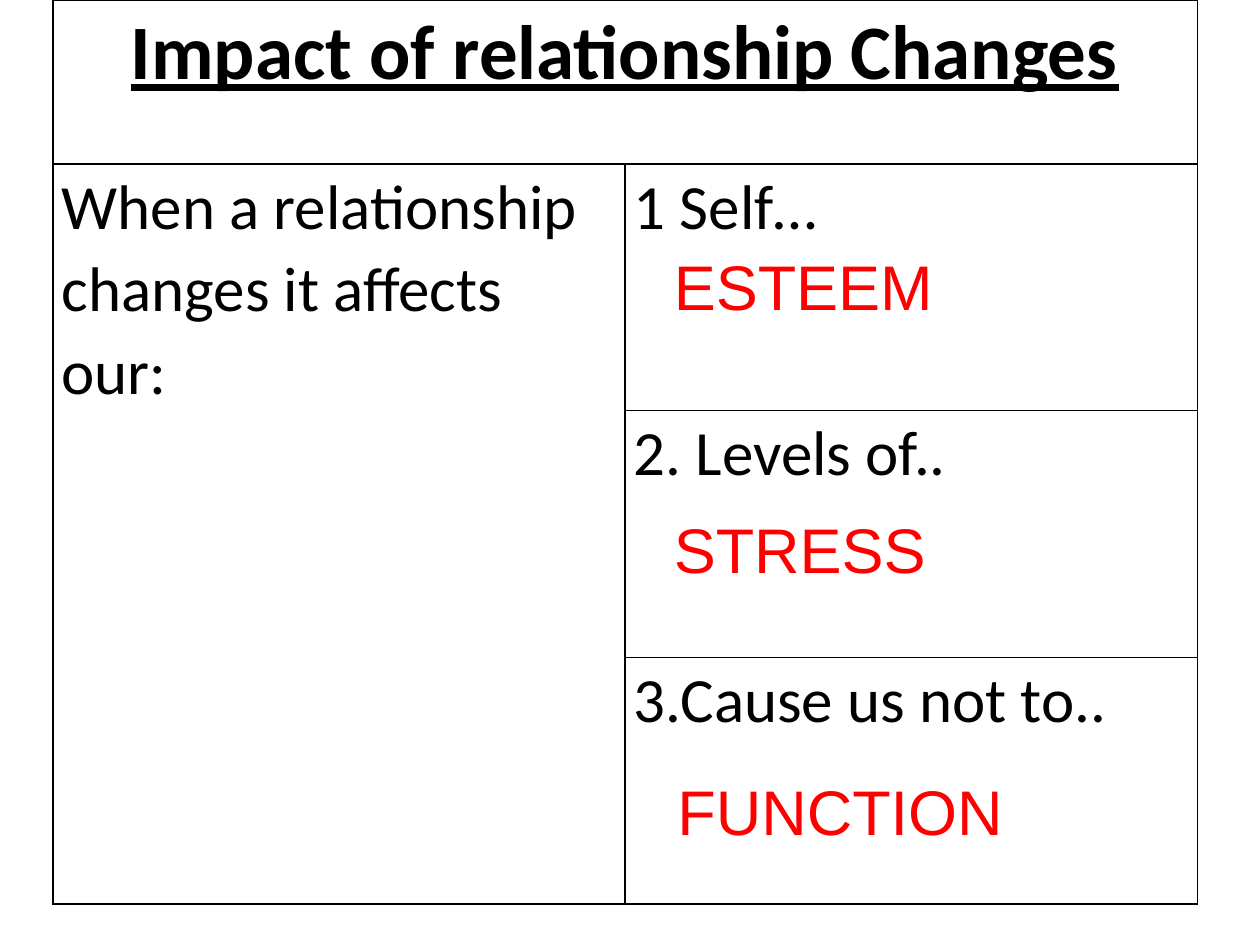
import pptx
import pptx.util
import pptx.dml.color
import pptx.enum.text
from lxml import etree

Pt = pptx.util.Pt
BLACK = pptx.dml.color.RGBColor(0, 0, 0)
RED = pptx.dml.color.RGBColor(255, 0, 0)
CENTER = pptx.enum.text.PP_ALIGN.CENTER
NS = "http://schemas.openxmlformats.org/drawingml/2006/main"


class Deck:
    """Holds the style and the current slide."""
    body, hand = "Calibri", "Arial"
    size, inset = 36, 5.04

    def __init__(self, wide, high):
        self.prs = pptx.Presentation()
        self.prs.slide_width, self.prs.slide_height = Pt(wide), Pt(high)
        self.slide = self.prs.slides.add_slide(self.prs.slide_layouts[6])

    def run(self, para, text, font, color, size=None, bold=False, line=False):
        run = para.add_run()
        run.text = text
        run.font.name, run.font.size = font, Pt(size or self.size)
        run.font.color.rgb = color
        run.font.bold, run.font.underline = bold, line

    def table(self, left, top, cols, rows):
        frame = self.slide.shapes.add_table(
            len(rows), len(cols), Pt(left), Pt(top), Pt(sum(cols)), Pt(sum(rows)))
        grid = frame.table
        grid.first_row = grid.horz_banding = False
        for col, wide in zip(grid.columns, cols):
            col.width = Pt(wide)
        for row, high in zip(grid.rows, rows):
            row.height = Pt(high)
        for cell in grid.iter_cells():
            self.edge(cell)
            cell.fill.background()
            cell.margin_left = cell.margin_right = Pt(self.inset)
            cell.margin_top = cell.margin_bottom = 0
        return grid

    def edge(self, cell):
        props = cell._tc.get_or_add_tcPr()
        for side in ("lnL", "lnR", "lnT", "lnB"):
            line = etree.SubElement(props, f"{{{NS}}}{side}", w=str(Pt(1)))
            fill = etree.SubElement(line, f"{{{NS}}}solidFill")
            etree.SubElement(fill, f"{{{NS}}}srgbClr", val=str(BLACK))

    def cell(self, cell, text, align=None, **style):
        para = cell.text_frame.paragraphs[0]
        para.line_spacing, para.alignment = 1.07, align
        self.run(para, text, self.body, BLACK, **style)

    def label(self, text, left, top, wide, high):
        box = self.slide.shapes.add_textbox(Pt(left), Pt(top), Pt(wide), Pt(high))
        frame = box.text_frame
        frame.word_wrap = True
        frame.auto_size = pptx.enum.text.MSO_AUTO_SIZE.SHAPE_TO_FIT_TEXT
        self.run(frame.paragraphs[0], text, self.hand, RED)


def main():
    deck = Deck(720, 540)

    # Table with a title row and one tall cell on the left
    grid = deck.table(30.2, 0, [327] * 2, [93.6] + [141] * 3)
    grid.cell(0, 0).merge(grid.cell(0, 1))
    grid.cell(1, 0).merge(grid.cell(3, 0))
    deck.cell(grid.cell(0, 0), "Impact of relationship Changes", CENTER,
              size=44, bold=True, line=True)
    deck.cell(grid.cell(1, 0), "When a relationship changes it affects our:")

    # Prompts with their answers
    pairs = [("1 Self…", "ESTEEM", 378), ("2. Levels of..", "STRESS", 378),
             ("3.Cause us not to..", "FUNCTION", 380)]
    for i, (ask, reply, left) in enumerate(pairs):
        deck.cell(grid.cell(i + 1, 1), ask)
        deck.label(reply, left, 138 + 150 * i, 258, 51)

    deck.prs.save("out.pptx")


if __name__ == "__main__":
    main()
